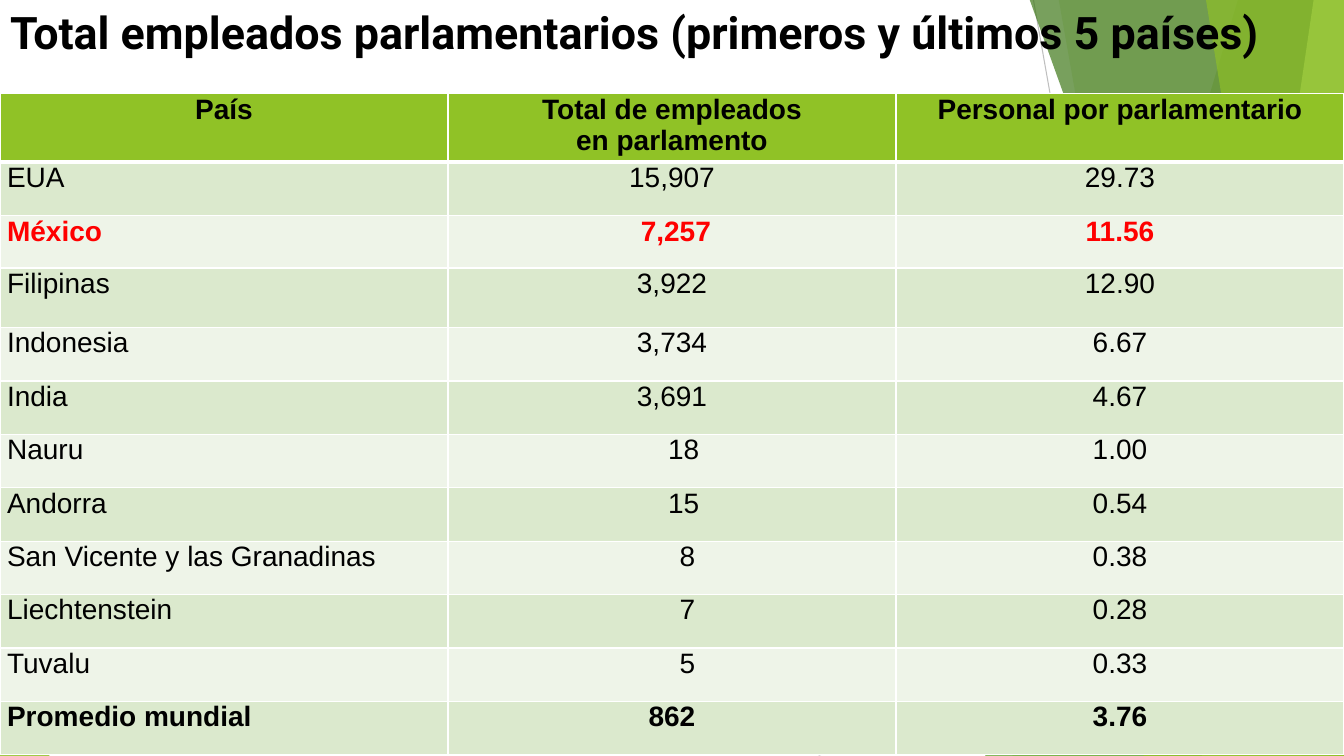
from lxml.etree import SubElement
from pptx import Presentation
from pptx.dml.color import RGBColor
from pptx.enum.shapes import MSO_CONNECTOR, MSO_SHAPE
from pptx.enum.text import MSO_ANCHOR, PP_ALIGN
from pptx.oxml import parse_xml
from pptx.oxml.ns import nsdecls, qn
from pptx.util import Inches, Pt

# Content
TITLE = "Total empleados parlamentarios (primeros y últimos 5 países)"
HEADER = ("País", "Total de empleados\nen parlamento", "Personal por parlamentario")
# country, employees, staff per member, indent of the employees in space widths
COUNTRIES = [
    ("EUA", "15,907", "29.73", 0),
    ("México", "7,257", "11.56", 1),
    ("Filipinas", "3,922", "12.90", 0),
    ("Indonesia", "3,734", "6.67", 0),
    ("India", "3,691", "4.67", 0),
    ("Nauru", "18", "1.00", 3),
    ("Andorra", "15", "0.54", 3),
    ("San Vicente y las Granadinas", "8", "0.38", 4),
    ("Liechtenstein", "7", "0.28", 4),
    ("Tuvalu", "5", "0.33", 4),
    ("Promedio mundial", "862", "3.76", 0),
]
HIGHLIGHT, AVERAGE = "México", "Promedio mundial"

THEME = {
    "title_font": "Roboto", "title_size": 32, "body_font": "Arial", "body_size": 20,
    "text": "000000", "highlight": "FF0000", "border": "FFFFFF",
    "header": "90C226", "bands": ("DBE9CD", "EEF4E8"),
}

# Geometry
WIDTH, HEIGHT, BLEED = 13.33, 7.5, -0.01
TABLE_TOP = 0.93
ROW_HEIGHT, SPECIAL_HEIGHTS = 0.53, {0: 0.68, 2: 0.52, 3: 0.59}
CELL_INSET, SPACE_WIDTH = 0.07, 0.077

# Decoration: thin lines, then bands (top x, bottom x) and triangles (box, apex)
THIN_LINES = [((10.25, 0), (11.58, HEIGHT), "BFBFBF"),
              ((WIDTH, 4.03), (8.12, HEIGHT), "D9D9D9")]
FACETS = [
    ("band", (12.28, 10.04), "90C226", 30),
    ("band", (10.5, 11.83), "90C226", 20),
    ("triangle", (9.77, 3.33, 3.56, 4.17, 1), "54A021", 72),
    ("band", (10.21, 12.91), "3F7819", 70),
    ("band", (13.03, 11.92), "C0E474", 70),
    ("band", (11.96, 13.18), "90C226", 65),
    ("triangle", (11.34, 3.93, 1.99, 3.57, 1), "90C226", 80),
    ("triangle", (0, 4.39, 0.49, 3.11, 0), "90C226", 85),
]


def color(value):
    return RGBColor.from_string(value)


def format_font(font, name, size, ink, bold):
    for attribute, value in {"name": name, "size": Pt(size), "bold": bold}.items():
        setattr(font, attribute, value)
    font.color.rgb = color(ink)


def add_thin_line(slide, start, end, ink):
    line = slide.shapes.add_connector(MSO_CONNECTOR.STRAIGHT, *map(Inches, start + end))
    line.line.color.rgb = color(ink)
    line.line.width = Pt(0.75)
    SubElement(line.element.spPr, qn("a:effectLst"))


def add_facet(slide, kind, geometry, ink, opacity):
    if kind == "band":
        top_x, bottom_x = geometry
        corners = [(WIDTH, BLEED), (WIDTH, HEIGHT), (bottom_x, HEIGHT)]
        builder = slide.shapes.build_freeform(Inches(top_x), Inches(BLEED))
        builder.add_line_segments([(Inches(x), Inches(y)) for x, y in corners], close=True)
        shape = builder.convert_to_shape()
    else:
        *box, apex = geometry
        shape = slide.shapes.add_shape(MSO_SHAPE.ISOSCELES_TRIANGLE, *map(Inches, box))
        shape.adjustments[0] = apex
    shape.shadow.inherit = False
    shape.line.fill.background()
    shape.fill.solid()
    shape.fill.fore_color.rgb = color(ink)
    fill_color = shape.element.spPr.find(qn("a:solidFill"))[0]
    SubElement(fill_color, qn("a:alpha"), val=str(opacity * 1000))


def set_borders(cell, widths):
    properties = cell._tc.get_or_add_tcPr()
    for index, (side, width) in enumerate(widths.items()):
        properties.insert(index, parse_xml(
            f'<a:ln{side} {nsdecls("a")} w="{Pt(width)}"><a:solidFill>'
            f'<a:srgbClr val="{THEME["border"]}"/></a:solidFill></a:ln{side}>'))


def fill_cell(cell, text, fill, ink, bold, centered, indent, widths):
    layout = {"margin_left": Inches(CELL_INSET + indent * SPACE_WIDTH),
              "margin_right": Inches(CELL_INSET), "margin_top": 0, "margin_bottom": 0,
              "vertical_anchor": MSO_ANCHOR.TOP, "text": text}
    for attribute, value in layout.items():
        setattr(cell, attribute, value)
    cell.fill.solid()
    cell.fill.fore_color.rgb = color(fill)
    set_borders(cell, widths)
    for paragraph in cell.text_frame.paragraphs:
        paragraph.alignment = PP_ALIGN.CENTER if centered else PP_ALIGN.LEFT
        for run in paragraph.runs:
            format_font(run.font, THEME["body_font"], THEME["body_size"], ink, bold)


def add_title(slide):
    title = slide.shapes.title
    title.element.getparent().append(title.element)  # in front of the decoration
    box = {"left": 0, "top": 0, "width": Inches(WIDTH), "height": Inches(1.06)}
    for attribute, value in box.items():
        setattr(title, attribute, value)
    frame = title.text_frame
    frame.text = TITLE
    frame.word_wrap = True
    frame.vertical_anchor = MSO_ANCHOR.TOP
    paragraph = frame.paragraphs[0]
    paragraph.alignment = PP_ALIGN.LEFT
    format_font(paragraph.runs[0].font, THEME["title_font"], THEME["title_size"],
                THEME["text"], True)


def add_country_table(slide):
    rows = [HEADER + (0,)] + COUNTRIES
    heights = [SPECIAL_HEIGHTS.get(index, ROW_HEIGHT) for index in range(len(rows))]
    table = slide.shapes.add_table(
        len(rows), len(HEADER), 0, Inches(TABLE_TOP),
        Inches(WIDTH), Inches(sum(heights))).table
    for row_index, (*texts, indent) in enumerate(rows):
        table.rows[row_index].height = Inches(heights[row_index])
        is_header = row_index == 0
        fill = THEME["header"] if is_header else THEME["bands"][(row_index - 1) % 2]
        ink = THEME["highlight"] if texts[0] == HIGHLIGHT else THEME["text"]
        bold = is_header or texts[0] in (HIGHLIGHT, AVERAGE)
        widths = {"L": 1, "R": 1, "T": 3 if row_index == 1 else 1, "B": 3 if is_header else 1}
        for column, text in enumerate(texts):
            fill_cell(table.cell(row_index, column), text, fill, ink, bold,
                      is_header or column > 0, indent if column == 1 else 0, widths)


def main():
    presentation = Presentation()
    presentation.slide_width = Inches(WIDTH)
    presentation.slide_height = Inches(HEIGHT)
    slide = presentation.slides.add_slide(presentation.slide_layouts.get_by_name("Title Only"))
    for thin_line in THIN_LINES:
        add_thin_line(slide, *thin_line)
    for facet in FACETS:
        add_facet(slide, *facet)
    add_title(slide)
    add_country_table(slide)
    presentation.save("out.pptx")


if __name__ == "__main__":
    main()
